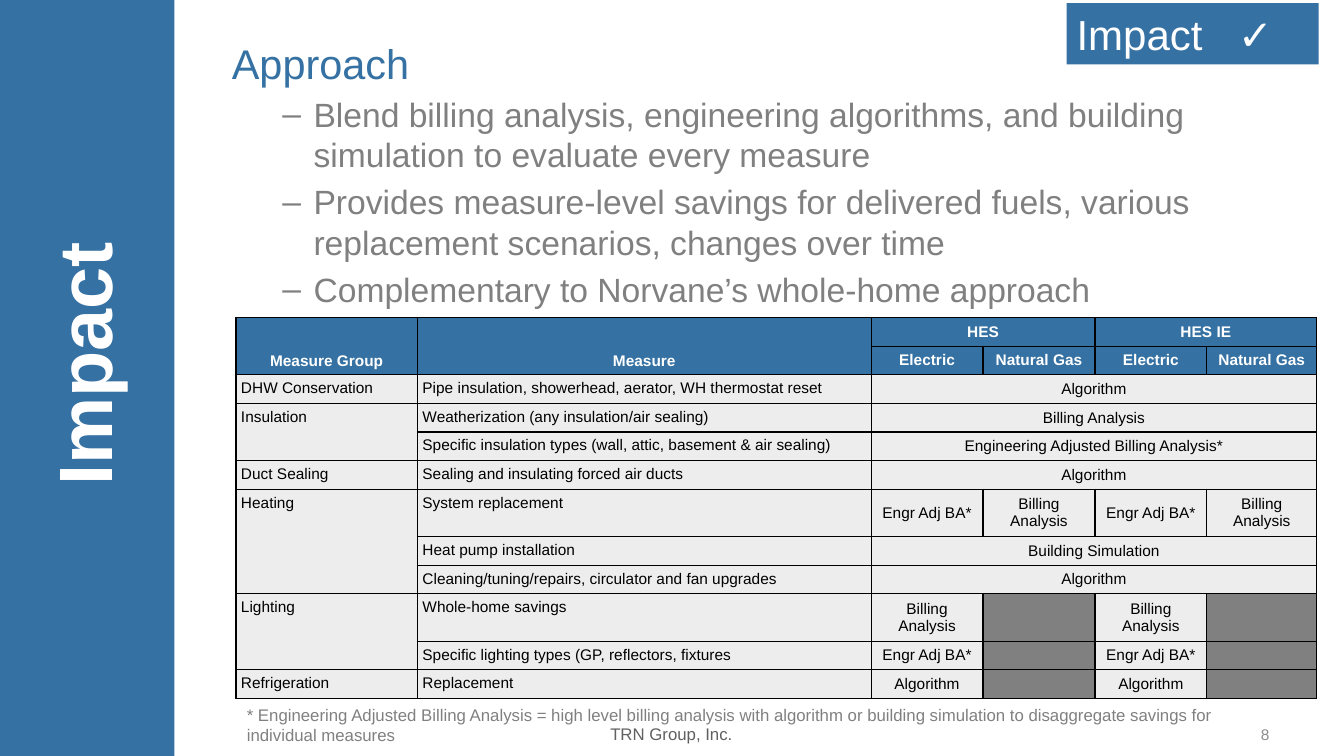
from lxml import etree
from pptx import Presentation
from pptx.dml.color import RGBColor
from pptx.enum.shapes import MSO_SHAPE
from pptx.enum.text import MSO_ANCHOR, PP_ALIGN
from pptx.oxml.ns import qn
from pptx.util import Inches, Pt

LEFT, CENTER, RIGHT = PP_ALIGN.LEFT, PP_ALIGN.CENTER, PP_ALIGN.RIGHT
TOP, MIDDLE, BOTTOM = MSO_ANCHOR.TOP, MSO_ANCHOR.MIDDLE, MSO_ANCHOR.BOTTOM

COLORS = {
    "blue": "3571A3", "white": "FFFFFF", "black": "000000", "gray": "808080",
    "cell": "EDEDED", "footer": "606060", "number": "8C8C8C",
}
FONT = "Arial"

TITLE = "Approach"
BULLETS = [
    "Blend billing analysis, engineering algorithms, and building simulation to evaluate every measure",
    "Provides measure-level savings for delivered fuels, various replacement scenarios, changes over time",
    "Complementary to Norvane’s whole-home approach",
]
SECTION = "Impact"
BADGE = "Impact\t✓"
FOOTNOTE = ("* Engineering Adjusted Billing Analysis = high level billing analysis with algorithm or "
            "building simulation to disaggregate savings for individual measures")
FOOTER = "TRN Group, Inc."
PAGE = "8"

# "^" joins the cell above, "<" joins the cell to the left, "" is a shaded cell
HEADER_ROWS = 2
ROWS = [
    ["Measure Group", "Measure", "HES", "<", "HES IE", "<"],
    ["^", "^", "Electric", "Natural Gas", "Electric", "Natural Gas"],
    ["DHW Conservation", "Pipe insulation, showerhead, aerator, WH thermostat reset",
     "Algorithm", "<", "<", "<"],
    ["Insulation", "Weatherization (any insulation/air sealing)", "Billing Analysis", "<", "<", "<"],
    ["^", "Specific insulation types (wall, attic, basement & air sealing)",
     "Engineering Adjusted Billing Analysis*", "<", "<", "<"],
    ["Duct Sealing", "Sealing and insulating forced air ducts", "Algorithm", "<", "<", "<"],
    ["Heating", "System replacement",
     "Engr Adj BA*", "Billing Analysis", "Engr Adj BA*", "Billing Analysis"],
    ["^", "Heat pump installation", "Building Simulation", "<", "<", "<"],
    ["^", "Cleaning/tuning/repairs, circulator and fan upgrades", "Algorithm", "<", "<", "<"],
    ["Lighting", "Whole-home savings", "Billing Analysis", "", "Billing Analysis", ""],
    ["^", "Specific lighting types (GP, reflectors, fixtures", "Engr Adj BA*", "", "Engr Adj BA*", ""],
    ["Refrigeration", "Replacement", "Algorithm", "", "Algorithm", ""],
]
COL_WIDTHS = [1.8, 4.5, 1.11, 1.11, 1.11, 1.09]
ROW_HEIGHT, TALL_HEIGHT = 0.28, 0.47
TALL_ROWS = (6, 9)


def rgb(name):
    return RGBColor.from_string(COLORS[name])


def box(at):
    return [Inches(v) for v in at]


def format_paragraph(p, size, color, bold=False, align=LEFT):
    p.alignment = align
    for r in p.runs:
        r.font.name, r.font.size, r.font.bold = FONT, Pt(size), bold
        r.font.color.rgb = rgb(color)


def add_text(slide, at, text, size, color, bold=False, align=LEFT, anchor=TOP):
    s = slide.shapes.add_textbox(*box(at))
    tf = s.text_frame
    tf.word_wrap, tf.vertical_anchor = True, anchor
    tf.text = text
    format_paragraph(tf.paragraphs[0], size, color, bold, align)
    return s


def add_block(slide, at):
    s = slide.shapes.add_shape(MSO_SHAPE.RECTANGLE, *box(at))
    s.shadow.inherit = False
    s.fill.solid()
    s.fill.fore_color.rgb = rgb("blue")
    s.line.fill.background()
    return s


def add_section_band(slide):
    add_block(slide, (0, 0, 1.73, 7.5))
    s = add_text(slide, (-1.96, 3.15, 5.67, 0.92), SECTION, 54, "white", True, CENTER)
    s.text_frame.paragraphs[0].line_spacing = 0.9
    s.rotation = 270


def place(holder, at):
    holder.left, holder.top, holder.width, holder.height = box(at)
    holder.text_frame.vertical_anchor = TOP
    holder.text_frame.word_wrap = True
    return holder.text_frame


def add_bullets(holder):
    tf = place(holder, (2.2, 0.88, 10.72, 2.22))
    tf.text = "\n".join(BULLETS)
    for i, p in enumerate(tf.paragraphs):
        p.level = 1
        pPr = p._p.get_or_add_pPr()
        pPr.set("marL", str(Inches(0.81)))
        pPr.set("indent", str(Inches(-0.31)))
        etree.SubElement(pPr, qn("a:buChar")).set("char", "–")
        p.line_spacing = 1.0
        p.space_before = Pt(5 if i else 0)
        format_paragraph(p, 24, "gray")


def add_borders(cell):
    tcPr = cell._tc.get_or_add_tcPr()
    for i, side in enumerate(("lnL", "lnR", "lnT", "lnB")):
        ln = etree.Element(qn(f"a:{side}"), w=str(Pt(1)))
        fill = etree.SubElement(ln, qn("a:solidFill"))
        etree.SubElement(fill, qn("a:srgbClr"), val=COLORS["black"])
        tcPr.insert(i, ln)


def fill_cell(cell, text, row, col):
    header = row < HEADER_ROWS
    cell.margin_left = cell.margin_right = cell.margin_top = cell.margin_bottom = Inches(0.05)
    if col >= 2:
        cell.vertical_anchor = MIDDLE
    else:
        cell.vertical_anchor = BOTTOM if header else TOP
    cell.fill.solid()
    cell.fill.fore_color.rgb = rgb("blue" if header else "cell" if text else "gray")
    add_borders(cell)
    p = cell.text_frame.paragraphs[0]
    if text in ("", "^", "<"):
        etree.SubElement(p._p, qn("a:endParaRPr")).set("sz", "1100")
    else:
        p.text = text
        format_paragraph(p, 11, "white" if header else "black", header,
                         CENTER if header or col >= 2 else LEFT)


def merge_cells(table, row, col):
    last_row, last_col = row, col
    while last_row + 1 < len(ROWS) and ROWS[last_row + 1][col] == "^":
        last_row += 1
    while last_col + 1 < len(COL_WIDTHS) and ROWS[row][last_col + 1] == "<":
        last_col += 1
    if (last_row, last_col) != (row, col):
        table.cell(row, col).merge(table.cell(last_row, last_col))


def add_measure_table(slide):
    heights = [TALL_HEIGHT if i in TALL_ROWS else ROW_HEIGHT for i in range(len(ROWS))]
    at = (2.34, 3.15, sum(COL_WIDTHS), sum(heights))
    table = slide.shapes.add_table(len(ROWS), len(COL_WIDTHS), *box(at)).table
    table.first_row = table.horz_banding = False
    for column, width in zip(table.columns, COL_WIDTHS):
        column.width = Inches(width)
    for row, height in zip(table.rows, heights):
        row.height = Inches(height)
    for i, texts in enumerate(ROWS):
        for j, text in enumerate(texts):
            fill_cell(table.cell(i, j), text, i, j)
            if text not in ("^", "<"):
                merge_cells(table, i, j)


def add_badge(slide):
    s = add_block(slide, (10.58, 0.03, 2.5, 0.61))
    tf = s.text_frame
    tf.text = BADGE
    p = tf.paragraphs[0]
    tabs = etree.SubElement(p._p.get_or_add_pPr(), qn("a:tabLst"))
    etree.SubElement(tabs, qn("a:tab"), pos=str(Inches(1.6)), algn="l")
    format_paragraph(p, 30, "white")


def main():
    prs = Presentation()
    prs.slide_width, prs.slide_height = Inches(13.33), Inches(7.5)
    slide = prs.slides.add_slide(prs.slide_layouts[1])

    add_section_band(slide)
    title = place(slide.shapes.title, (2.2, 0.33, 8.2, 0.6))
    title.text = TITLE
    format_paragraph(title.paragraphs[0], 29.6, "blue")
    add_bullets(slide.placeholders[1])

    add_badge(slide)
    add_measure_table(slide)
    add_text(slide, (2.35, 6.94, 9.83, 0.5), FOOTNOTE, 12, "gray")
    add_text(slide, (5.93, 7.13, 1.46, 0.3), FOOTER, 12, "footer", align=CENTER)
    add_text(slide, (9.58, 7.09, 3.11, 0.4), PAGE, 11, "number", align=RIGHT, anchor=MIDDLE)
    prs.save("out.pptx")


if __name__ == "__main__":
    main()
